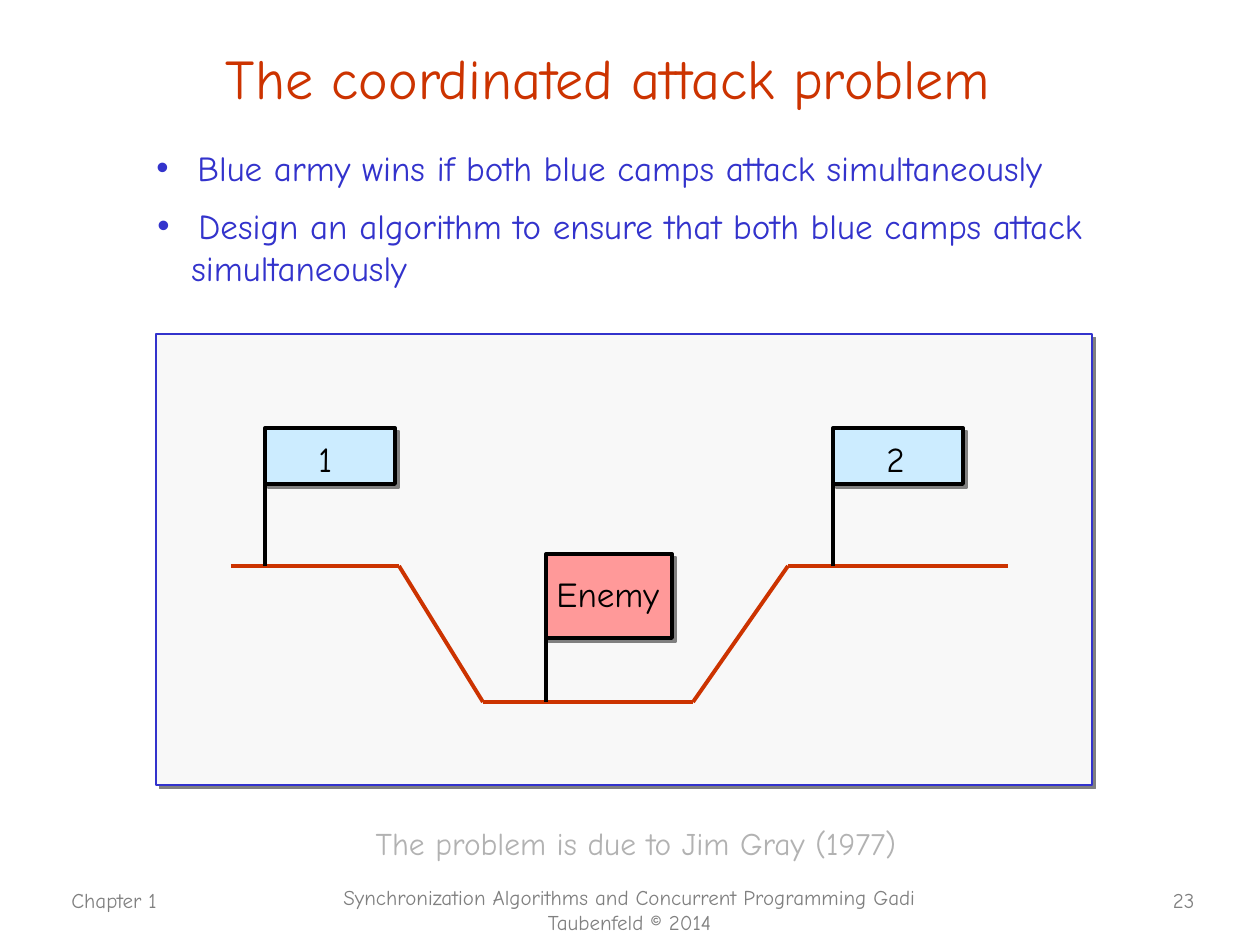
from dataclasses import dataclass
from itertools import pairwise

from lxml.etree import SubElement
from pptx import Presentation
from pptx.dml.color import RGBColor
from pptx.enum.shapes import MSO_CONNECTOR, MSO_SHAPE
from pptx.enum.text import MSO_ANCHOR, PP_ALIGN
from pptx.oxml.ns import qn
from pptx.util import Emu, Pt

LEFT, CENTER, RIGHT = PP_ALIGN.LEFT, PP_ALIGN.CENTER, PP_ALIGN.RIGHT


@dataclass(frozen=True)
class Theme:
    font: str = "Comic Neue"
    title: str = "CC3300"
    body: str = "3333CC"
    ground: str = "CC3300"
    ink: str = "000000"
    muted: str = "808080"
    credit: str = "B2B2B2"
    paper: str = "FFFFFF"
    panel: str = "F8F8F8"
    blue_camp: str = "CCECFF"
    enemy_camp: str = "FF9999"
    title_size: int = 32
    body_size: int = 20
    credit_size: int = 18
    footer_size: int = 12
    thin: float = 0.75
    thick: float = 2.25


THEME = Theme()

# Boxes are left, top, width, height in px
TITLE = ("The coordinated attack problem", (73, 33, 1071, 104))
# Each point: box, first line, continuation lines
POINTS = [
    ((144, 140, 1048, 54), "Blue army wins if both blue camps attack simultaneously", []),
    ((145, 198, 1040, 97), "Design an algorithm to ensure that both blue camps attack",
     ["simultaneously"]),
]
BULLET_INDENT, CONTINUATION_INDENT = 41, 34
PANEL = (156, 334, 936, 451)
HILL, VALLEY = 566, 702
GROUND = [(231, HILL), (399, HILL), (483, VALLEY),
          (693, VALLEY), (788, HILL), (1008, HILL)]
# Each camp: flag box, colour, foot of pole, label, label box, wraps
CAMPS = [
    ((546, 554, 126, 84), THEME.enemy_camp, VALLEY, "Enemy", (544, 566, 160, 54), True),
    ((265, 428, 130, 56), THEME.blue_camp, HILL, "1", (306, 431, 42, 54), False),
    ((833, 428, 130, 56), THEME.blue_camp, HILL, "2", (874, 431, 47, 54), False),
]
CREDIT = ("The problem is due to Jim Gray (1977)", (278, 814, 716, 64))
FOOTERS = [
    ("Chapter 1", (59, 881, 262, 63), LEFT),
    ("Synchronization Algorithms and Concurrent Programming Gadi Taubenfeld © 2014",
     (325, 878, 609, 63), CENTER),
    ("23", (1148, 881, 59, 38), RIGHT),
]


def px(value):
    return Emu(round(value * 914400 / 126))


def place(box):
    return [px(value) for value in box]


def rgb(colour):
    return RGBColor.from_string(colour)


def style(paragraph, size, colour, align=LEFT):
    paragraph.alignment = align
    font = paragraph.font
    font.name, font.size = THEME.font, Pt(size)
    font.color.rgb = rgb(colour)


def add_shadow(properties, distance, colour, blur=0, opacity=100):
    """Append an outer shadow at 45 degrees; distances are in points."""
    effects = SubElement(properties, qn("a:effectLst"))
    outer = SubElement(effects, qn("a:outerShdw"), blurRad=str(Pt(blur)),
                       dist=str(Pt(distance)), dir="2700000", algn="ctr", rotWithShape="0")
    shade = SubElement(outer, qn("a:srgbClr"), val=colour)
    SubElement(shade, qn("a:alpha"), val=str(opacity * 1000))


def indent(paragraph, margin, hanging=False):
    properties = paragraph._p.get_or_add_pPr()
    properties.set("marL", str(px(margin)))
    properties.set("indent", str(-px(margin) if hanging else 0))
    if hanging:
        SubElement(properties, qn("a:buFont"), typeface="Arial")
        SubElement(properties, qn("a:buChar"), char="•")


def add_text(shapes, text, box, size, colour, align=LEFT, wrap=True):
    frame = shapes.add_textbox(*place(box)).text_frame
    frame.word_wrap = wrap
    frame.text = text
    style(frame.paragraphs[0], size, colour, align)
    return frame


def add_rect(shapes, box, fill, line=None, width=0):
    rect = shapes.add_shape(MSO_SHAPE.RECTANGLE, *place(box))
    rect.fill.solid()
    rect.fill.fore_color.rgb = rgb(fill)
    if line:
        rect.line.color.rgb = rgb(line)
        rect.line.width = Pt(width)
        add_shadow(rect._element.spPr, 2.8, THEME.muted)
    else:
        rect.line.fill.background()
        rect.shadow.inherit = False
    return rect


def add_line(shapes, start, end, colour):
    line = shapes.add_connector(MSO_CONNECTOR.STRAIGHT, *place(start + end))
    line.line.color.rgb = rgb(colour)
    line.line.width = Pt(THEME.thick)
    SubElement(line._element.spPr, qn("a:effectLst"))


def add_title(slide):
    text, box = TITLE
    title = slide.shapes.title
    title.left, title.top, title.width, title.height = place(box)
    frame = title.text_frame
    frame.text = text
    frame.vertical_anchor = MSO_ANCHOR.MIDDLE
    heading = frame.paragraphs[0]
    style(heading, THEME.title_size, THEME.title, CENTER)
    heading.line_spacing = 0.7
    add_shadow(heading.runs[0]._r.get_or_add_rPr(), 3, THEME.ink, blur=3, opacity=40)


def add_points(shapes):
    for box, first, continuation in POINTS:
        frame = add_text(shapes, first, box, THEME.body_size, THEME.body)
        indent(frame.paragraphs[0], BULLET_INDENT, hanging=True)
        for text in continuation:
            paragraph = frame.add_paragraph()
            paragraph.text = text
            style(paragraph, THEME.body_size, THEME.body)
            indent(paragraph, CONTINUATION_INDENT)


def add_battlefield(shapes):
    add_rect(shapes, PANEL, THEME.panel, THEME.body, THEME.thin)
    for start, end in pairwise(GROUND):
        add_line(shapes, start, end, THEME.ground)
    for flag, colour, foot, label, label_box, wrap in CAMPS:
        left, top = flag[:2]
        add_rect(shapes, flag, colour, THEME.ink, THEME.thick)
        add_line(shapes, (left, top), (left, foot), THEME.ink)
        add_text(shapes, label, label_box, THEME.body_size, THEME.ink, wrap=wrap)


def add_credit(shapes):
    text, box = CREDIT
    frame = add_rect(shapes, box, THEME.paper).text_frame
    frame.text = text
    frame.vertical_anchor = MSO_ANCHOR.TOP
    line = frame.paragraphs[0]
    style(line, THEME.credit_size, THEME.credit, CENTER)
    line.line_spacing = 1.1
    line.space_before = Pt(3.6)


def main():
    deck = Presentation()
    deck.slide_width, deck.slide_height = px(1260), px(945)
    slide = deck.slides.add_slide(deck.slide_layouts[5])
    add_title(slide)
    add_points(slide.shapes)
    add_battlefield(slide.shapes.add_group_shape().shapes)
    add_credit(slide.shapes)
    for text, box, align in FOOTERS:
        add_text(slide.shapes, text, box, THEME.footer_size, THEME.muted, align)
    deck.save("out.pptx")


if __name__ == "__main__":
    main()
